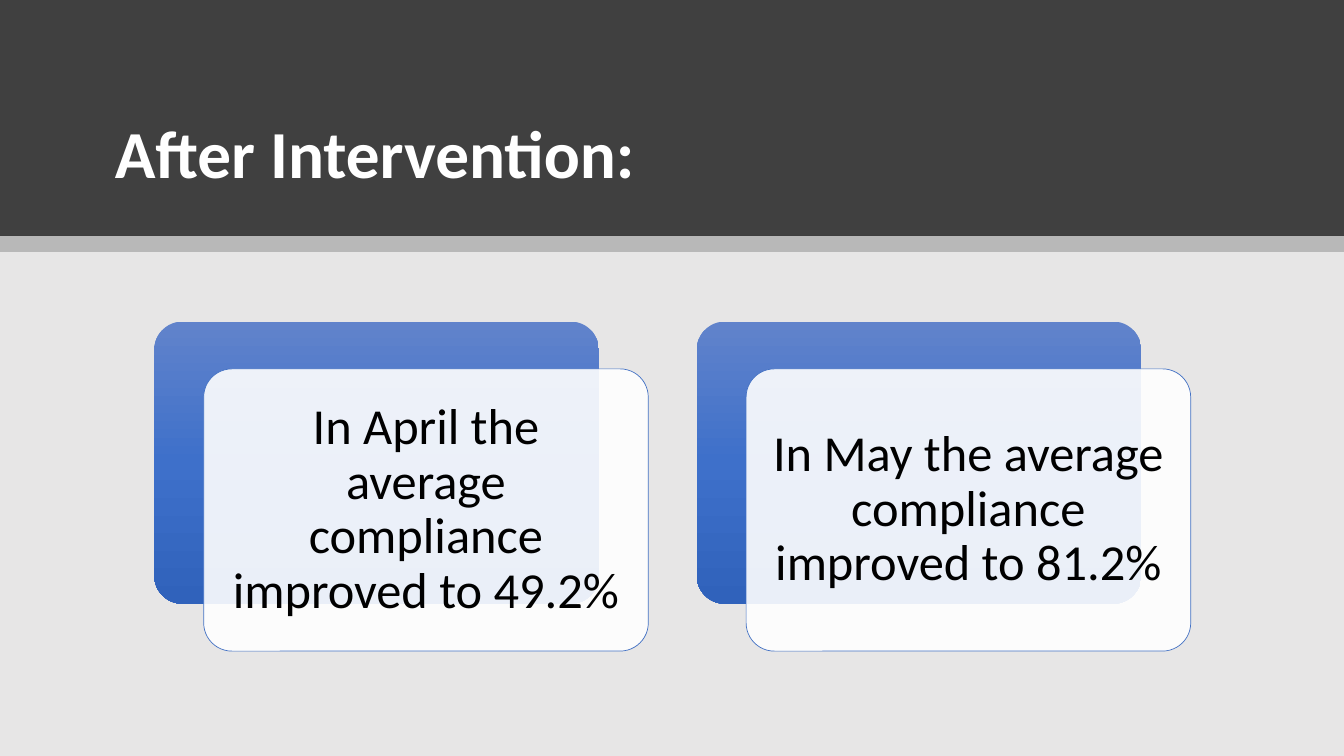
"""Builds the slide on compliance after the intervention."""
from dataclasses import dataclass

from lxml import etree
from pptx import Presentation
from pptx.dml.color import RGBColor
from pptx.enum import shapes, text
from pptx.oxml import ns
from pptx.util import Inches, Pt

FONT = "Calibri"
CARD_W, CARD_H = 4.41, 2.8
CARD_TOP = 3.19
OFFSET_X, OFFSET_Y = 0.49, 0.47
TEXT_MARGIN = 0.08
GRADIENT = ((0, "6183CB"), (50, "3E70CA"), (100, "3062BB"))


@dataclass(frozen=True)
class Band:
    top: float
    height: float
    color: str
    opacity: int = 100


@dataclass(frozen=True)
class Result:
    left: float
    wording: str


BANDS = (
    Band(0, 7.5, "E7E6E6"),
    Band(0, 2.34, "404040"),
    Band(2.34, 0.16, "000000", 20),
)
RESULTS = (
    Result(1.53, "In April the average compliance improved to 49.2%"),
    Result(6.91, "In May the average compliance improved to 81.2%"),
)


def rgb(value: str) -> RGBColor:
    """Turn a hex string into a colour."""
    return RGBColor.from_string(value)


def add_block(slide, kind, left: float, top: float, width: float, height: float):
    """Add a preset shape without line or shadow."""
    block = slide.shapes.add_shape(
        kind, Inches(left), Inches(top), Inches(width), Inches(height)
    )
    block.shadow.inherit = False
    block.line.fill.background()
    return block


def fill_solid(block, color: str, opacity: int = 100) -> None:
    """Fill a shape with one colour at the given opacity in percent."""
    block.fill.solid()
    block.fill.fore_color.rgb = rgb(color)
    if opacity < 100:
        tint = block.element.spPr.find(ns.qn("a:solidFill"))[0]
        etree.SubElement(tint, ns.qn("a:alpha"), val=str(opacity * 1000))


def fill_gradient(block) -> None:
    """Fill a shape with the blue gradient running downwards."""
    block.fill.gradient()
    block.fill.gradient_angle = 270
    stops = block.element.spPr.find(".//" + ns.qn("a:gsLst"))
    for stop in list(stops):
        stops.remove(stop)
    for position, color in GRADIENT:
        stop = etree.SubElement(stops, ns.qn("a:gs"), pos=str(position * 1000))
        etree.SubElement(stop, ns.qn("a:srgbClr"), val=color)


def add_card(slide, left: float, top: float):
    """Add one rounded card."""
    card = add_block(
        slide, shapes.MSO_SHAPE.ROUNDED_RECTANGLE, left, top, CARD_W, CARD_H
    )
    card.adjustments[0] = 0.1
    return card


def add_wording(slide, wording: str, left: float, top: float, width: float,
                height: float, size: int, color: str, bold: bool = False):
    """Add a wrapped text box and return its frame."""
    frame = slide.shapes.add_textbox(
        Inches(left), Inches(top), Inches(width), Inches(height)
    ).text_frame
    frame.word_wrap = True
    frame.text = wording
    paragraph = frame.paragraphs[0]
    paragraph.line_spacing = 0.9
    font = paragraph.runs[0].font
    font.name, font.size, font.bold = FONT, Pt(size), bold
    font.color.rgb = rgb(color)
    return frame


def add_result(slide, result: Result) -> None:
    """Add a blue card, the white card over it and its wording."""
    fill_gradient(add_card(slide, result.left, CARD_TOP))
    left, top = result.left + OFFSET_X, CARD_TOP + OFFSET_Y
    front = add_card(slide, left, top)
    fill_solid(front, "FFFFFF", 90)
    front.line.color.rgb = rgb("4472C4")
    front.line.width = Pt(0.5)
    frame = add_wording(
        slide, result.wording, left + TEXT_MARGIN, top + TEXT_MARGIN,
        CARD_W - 2 * TEXT_MARGIN, CARD_H - 2 * TEXT_MARGIN, 36, "000000",
    )
    frame.vertical_anchor = text.MSO_ANCHOR.MIDDLE
    frame.margin_left = frame.margin_right = Inches(0.17)
    frame.margin_top = frame.margin_bottom = Inches(0.15)
    frame.paragraphs[0].alignment = text.PP_ALIGN.CENTER


def main() -> None:
    """Build and save the slide."""
    deck = Presentation()
    deck.slide_width, deck.slide_height = Inches(13.33), Inches(7.5)
    slide = deck.slides.add_slide(deck.slide_layouts[6])
    for band in BANDS:
        strip = add_block(
            slide, shapes.MSO_SHAPE.RECTANGLE, 0, band.top, 13.33, band.height
        )
        fill_solid(strip, band.color, band.opacity)
    heading = add_wording(
        slide, "After Intervention:", 1.04, 0.47, 11.24, 1.49, 48, "FFFFFF", True
    )
    heading.vertical_anchor = text.MSO_ANCHOR.BOTTOM
    for result in RESULTS:
        add_result(slide, result)
    deck.save("out.pptx")


if __name__ == "__main__":
    main()
